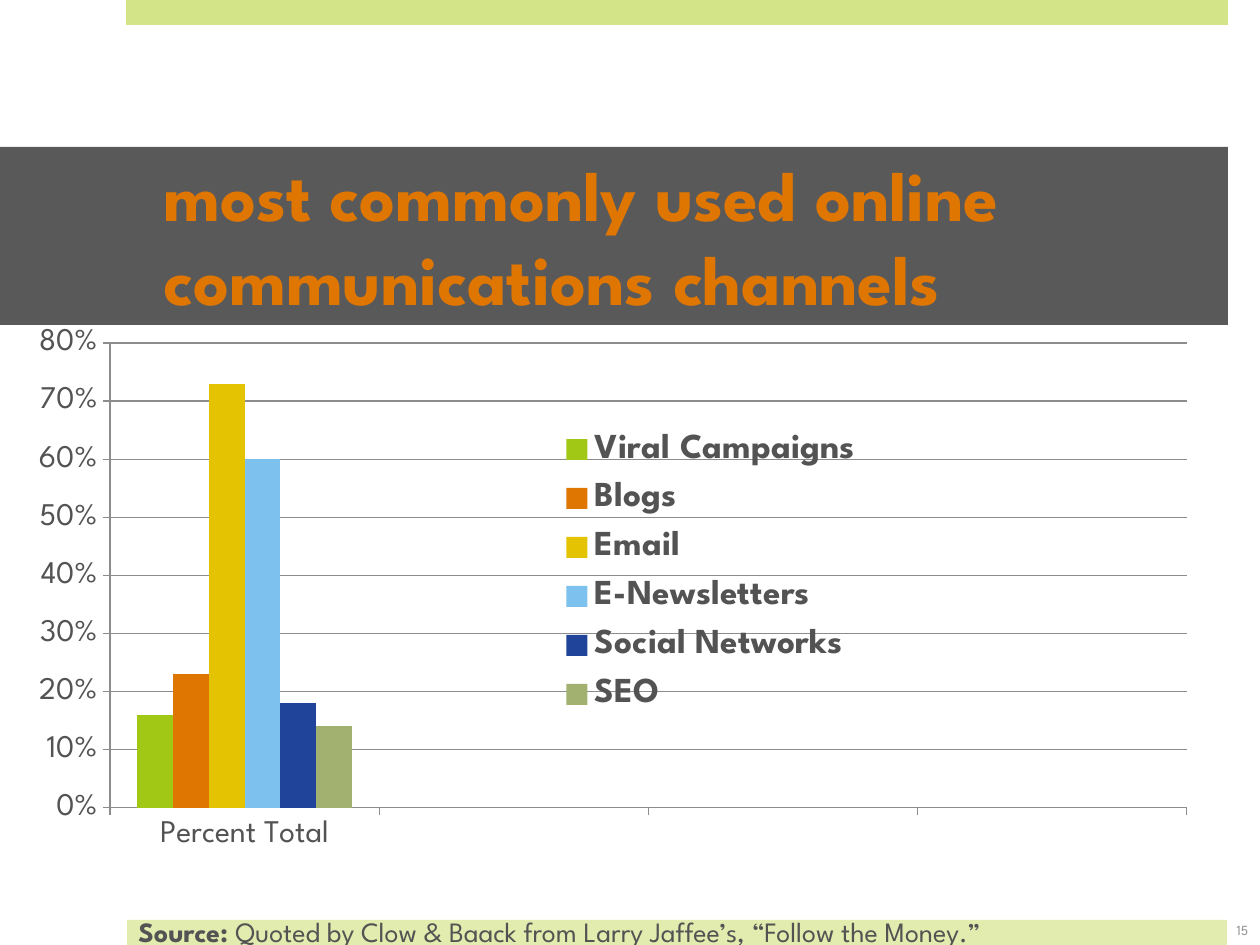
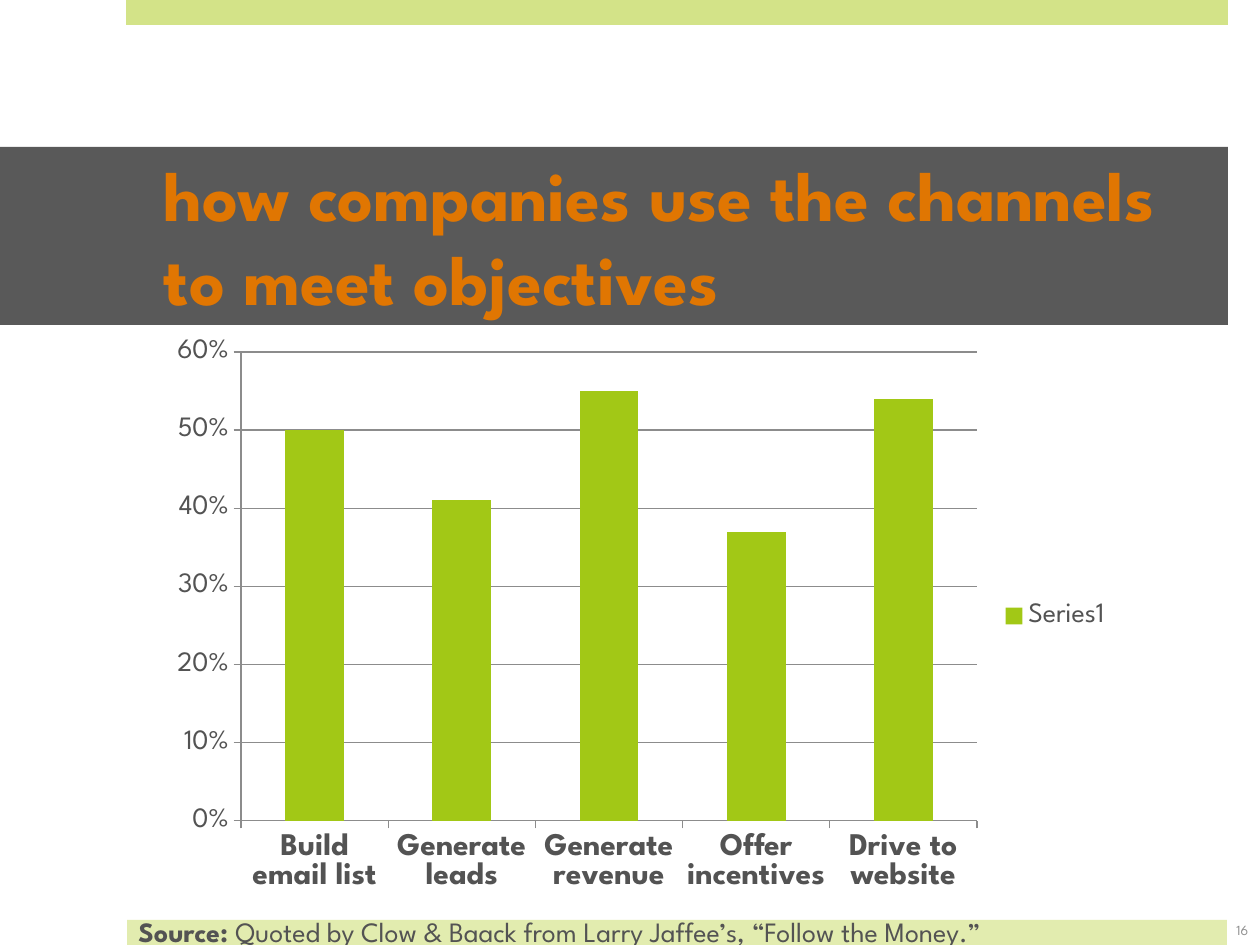
import dataclasses

import pptx
import pptx.chart.data
import pptx.dml.color
import pptx.enum.chart
import pptx.enum.shapes
import pptx.enum.text
import pptx.oxml
import pptx.oxml.ns
import pptx.util

SCALE = 914400 / 126


@dataclasses.dataclass(frozen=True)
class Theme:
    """Hold the colours, font and type sizes of the deck."""
    font: str = "League Spartan"
    text: str = "535353"
    title: str = "E07602"
    title_band: str = "595959"
    top_band: str = "D3E388"
    foot_band: str = "E2ECAF"
    number: str = "8F8F8F"
    rule: str = "8C8C8C"
    white: str = "FFFFFF"
    series: tuple = ("A2C816", "E07602", "E4C402", "7DC1EF", "21449B", "A2B170")
    title_size: int = 40
    large_size: int = 20
    chart_size: int = 18
    source_size: int = 16
    number_size: int = 8


THEME = Theme()
PAGE = (0, 0, 1260, 945)
TOP_BAND = (126, 0, 1102, 25)
FOOT_BAND = (126, 920, 1102, 25)
TITLE_BOX = (0, 147, 1228, 178)
SOURCE_BOX = (126, 908, 1102, 47)
NUMBER_BOX = (1211, 905, 63, 50)


def px(length):
    """Turn pixels into EMU."""
    return pptx.util.Emu(round(length * SCALE))


def emu(box):
    """Turn a pixel box into EMU lengths."""
    return [px(length) for length in box]


def rgb(code):
    """Read a colour code."""
    return pptx.dml.color.RGBColor.from_string(code)


def style_font(font, size, color=THEME.text, bold=False):
    """Set family, size, colour and weight of a font."""
    font.name = THEME.font
    font.size = pptx.util.Pt(size)
    font.bold = bold
    font.color.rgb = rgb(color)


def add_text(para, text, **style):
    """Add one formatted span to a paragraph."""
    span = para.add_run()
    span.text = text
    style_font(span.font, **style)


def add_rectangle(page, box, fill=None, line=None):
    """Draw a flat rectangle."""
    shape = page.shapes.add_shape(pptx.enum.shapes.MSO_SHAPE.RECTANGLE, *emu(box))
    shape.shadow.inherit = False
    if fill:
        shape.fill.solid()
        shape.fill.fore_color.rgb = rgb(fill)
    else:
        shape.fill.background()
    if line:
        shape.line.color.rgb = rgb(line)
        shape.line.width = pptx.util.Pt(0.75)
    else:
        shape.line.fill.background()
    return shape


def add_layout_bands(layout, page):
    """Put the top and foot bands on the shared layout."""
    bands = ((TOP_BAND, THEME.top_band), (FOOT_BAND, THEME.foot_band))
    for number, (box, color) in enumerate(bands, 101):
        band = add_rectangle(page, box, fill=color)
        band.element.xpath("p:nvSpPr/p:cNvPr")[0].set("id", str(number))
        layout.shapes.element.append(band.element)


def add_title(page, box, text):
    """Fill the title placeholder as a dark band."""
    title = page.shapes.title
    title.left, title.top, title.width, title.height = emu(box)
    title.fill.solid()
    title.fill.fore_color.rgb = rgb(THEME.title_band)
    frame = title.text_frame
    frame.auto_size = pptx.enum.text.MSO_AUTO_SIZE.NONE
    frame.word_wrap = True
    frame.vertical_anchor = pptx.enum.text.MSO_ANCHOR.MIDDLE
    frame.margin_left, frame.margin_right = px(164), px(38)
    para = frame.paragraphs[0]
    para.alignment = pptx.enum.text.PP_ALIGN.LEFT
    add_text(para, text, size=THEME.title_size, color=THEME.title, bold=True)


def add_number(page, box, number):
    """Write the page number."""
    frame = page.shapes.add_textbox(*emu(box)).text_frame
    frame.word_wrap = True
    frame.vertical_anchor = pptx.enum.text.MSO_ANCHOR.MIDDLE
    para = frame.paragraphs[0]
    para.alignment = pptx.enum.text.PP_ALIGN.CENTER
    add_text(para, str(number), size=THEME.number_size, color=THEME.number)


def add_source(page, box):
    """Write the source line over the foot band."""
    frame = add_rectangle(page, box, line=THEME.white).text_frame
    frame.word_wrap = True
    frame.vertical_anchor = pptx.enum.text.MSO_ANCHOR.TOP
    para = frame.paragraphs[0]
    para.alignment = pptx.enum.text.PP_ALIGN.LEFT
    add_text(para, "Source: ", size=THEME.source_size, bold=True)
    add_text(para, "Quoted by Clow & Baack from Larry Jaffee’s, “Follow the Money.”",
             size=THEME.source_size)


def set_layout(parent, position, inside, outer):
    """Place a chart part by pixels inside the chart box."""
    for old in parent.findall(pptx.oxml.ns.qn("c:layout")):
        parent.remove(old)
    target = '<c:layoutTarget val="inner"/>' if position == 0 else ""
    modes = '<c:xMode val="edge"/><c:yMode val="edge"/>'
    sizes = (outer[2], outer[3], outer[2], outer[3])
    values = "".join(f'<c:{name} val="{length / size:.4f}"/>'
                     for name, length, size in zip("xywh", inside, sizes))
    parent.insert(position, pptx.oxml.parse_xml(
        f'<c:layout {pptx.oxml.ns.nsdecls("c")}><c:manualLayout>'
        f'{target}{modes}{values}</c:manualLayout></c:layout>'))


def style_axis(axis, size, bold=False):
    """Format the labels, ticks and line of an axis."""
    axis.major_tick_mark = pptx.enum.chart.XL_TICK_MARK.OUTSIDE
    axis.minor_tick_mark = pptx.enum.chart.XL_TICK_MARK.NONE
    axis.format.line.color.rgb = rgb(THEME.rule)
    axis.format.line.width = pptx.util.Pt(0.75)
    style_font(axis.tick_labels.font, size, bold=bold)


def add_column_chart(page, box, plot_box, categories, series, top, size,
                     bold_categories=False, legend_size=None, legend_box=None):
    """Draw a clustered column chart of percentages."""
    data = pptx.chart.data.CategoryChartData(number_format="0%")
    data.categories = categories
    for name, values in series:
        data.add_series(name, values)
    kind = pptx.enum.chart.XL_CHART_TYPE.COLUMN_CLUSTERED
    chart = page.shapes.add_chart(kind, *emu(box), data).chart
    style_font(chart.font, size)
    chart.has_title = False

    plot = chart.plots[0]
    plot.gap_width = 150
    plot.vary_by_categories = False
    for column, color in zip(plot.series, THEME.series):
        column.format.fill.solid()
        column.format.fill.fore_color.rgb = rgb(color)
        column.invert_if_negative = False

    style_axis(chart.category_axis, THEME.chart_size, bold_categories)
    scale = chart.value_axis
    style_axis(scale, size)
    scale.minimum_scale, scale.maximum_scale, scale.major_unit = 0, top, 0.1
    scale.tick_labels.number_format = "0%"
    scale.tick_labels.number_format_is_linked = False
    scale.has_major_gridlines = True
    scale.major_gridlines.format.line.color.rgb = rgb(THEME.rule)
    scale.major_gridlines.format.line.width = pptx.util.Pt(0.75)

    chart.has_legend = True
    chart.legend.position = pptx.enum.chart.XL_LEGEND_POSITION.RIGHT
    chart.legend.include_in_layout = False
    style_font(chart.legend.font, legend_size or size, bold=bool(legend_size))
    set_layout(chart.element.xpath("c:chart/c:plotArea")[0], 0, plot_box, box)
    if legend_box:
        set_layout(chart.element.xpath("c:chart/c:legend")[0], 1, legend_box, box)


def add_page(deck, title, number):
    """Add a page with its title and number."""
    page = deck.slides.add_slide(deck.slide_layouts[5])
    add_title(page, TITLE_BOX, title)
    add_number(page, NUMBER_BOX, number)
    return page


def add_channels_page(deck):
    """Show how often each channel is used."""
    page = add_page(deck, "most commonly used online communications channels", 15)
    shares = {"Viral Campaigns": 0.16, "Blogs": 0.23, "Email": 0.73,
              "E-Newsletters": 0.6, "Social Networks": 0.18, "SEO": 0.14}
    add_column_chart(
        page, (0, 325, 1218, 557), (110, 18, 1077, 465),
        ["Percent Total", "", "", ""],
        [(name, (share, None, None, None)) for name, share in shares.items()],
        top=0.8, size=THEME.chart_size,
        legend_size=THEME.large_size, legend_box=(556, 92, 310, 310))
    add_source(page, SOURCE_BOX)
    return page


def add_objectives_page(deck):
    """Show which objectives the channels serve."""
    page = add_page(deck, "how companies use the channels to meet objectives", 16)
    add_source(page, SOURCE_BOX)
    shares = {"Build email list": 0.5, "Generate leads": 0.41, "Generate revenue": 0.55,
              "Offer incentives": 0.37, "Drive to website": 0.54}
    add_column_chart(
        page, (158, 328, 966, 576), (83, 24, 736, 469),
        list(shares), [("Series1", list(shares.values()))],
        top=0.6, size=THEME.source_size, bold_categories=True)


def main():
    """Build and save the deck."""
    deck = pptx.Presentation()
    deck.slide_width, deck.slide_height = emu(PAGE)[2:]
    first_page = add_channels_page(deck)
    add_layout_bands(first_page.slide_layout, first_page)
    add_objectives_page(deck)
    deck.save("out.pptx")


if __name__ == "__main__":
    main()
